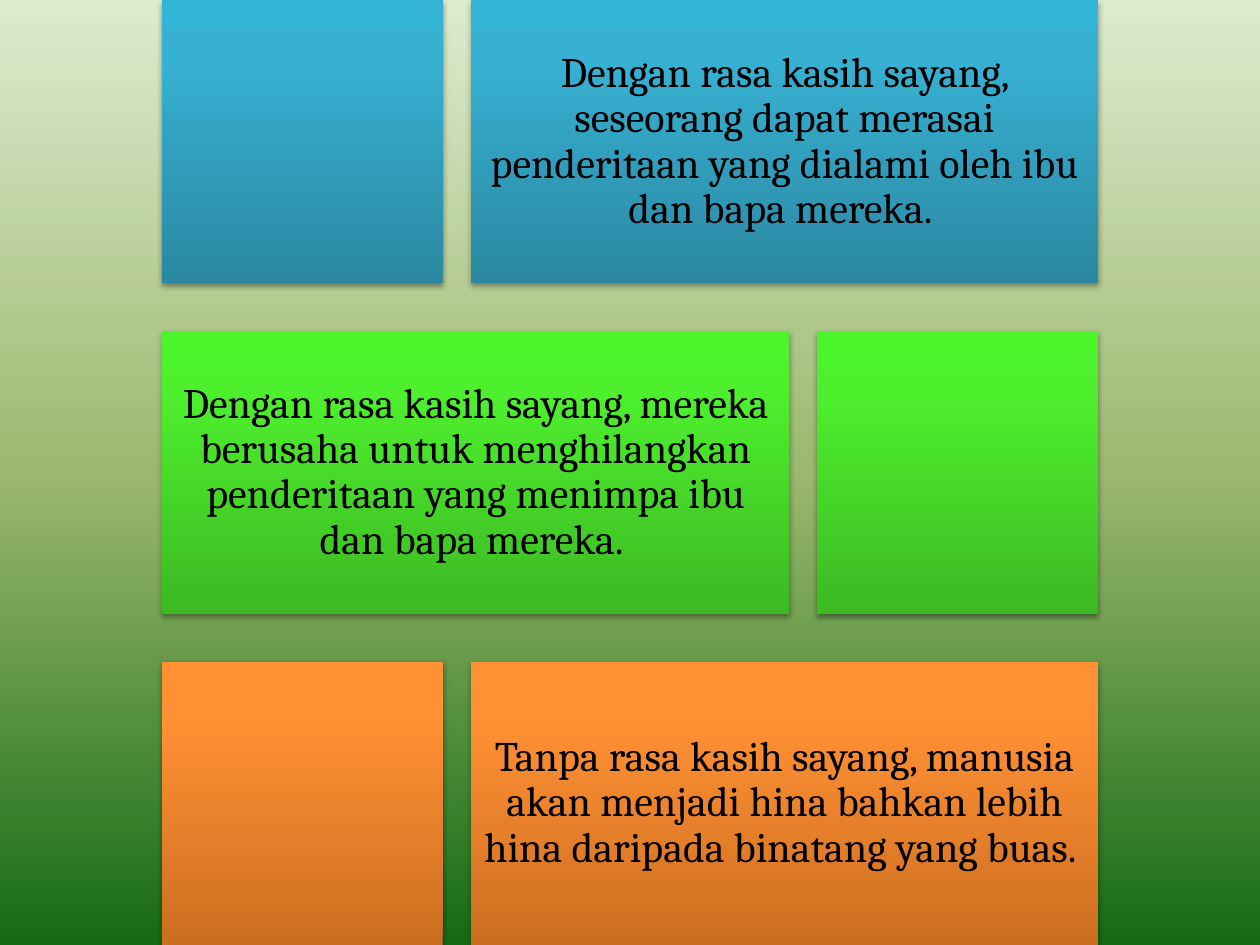
from lxml.etree import SubElement
from pptx import Presentation
from pptx.dml.color import RGBColor
from pptx.enum.shapes import MSO_SHAPE
from pptx.enum.text import MSO_ANCHOR, PP_ALIGN
from pptx.oxml.ns import qn
from pptx.util import Pt

BLACK = RGBColor(0x00, 0x00, 0x00)
MEADOW = [(0, RGBColor(0xDD, 0xEB, 0xCF)), (50, RGBColor(0x9C, 0xB8, 0x6E)),
          (100, RGBColor(0x15, 0x6B, 0x13))]
BLUE = [(0, RGBColor(0x2A, 0x88, 0xA2)), (80, RGBColor(0x37, 0xB1, 0xD2)),
        (100, RGBColor(0x34, 0xB4, 0xD6))]
GREEN = [(0, RGBColor(0x3C, 0xB9, 0x23)), (80, RGBColor(0x4E, 0xF0, 0x2E)),
         (100, RGBColor(0x4C, 0xF5, 0x2A))]
ORANGE = [(0, RGBColor(0xCC, 0x6E, 0x20)), (80, RGBColor(0xFF, 0x90, 0x34)),
          (100, RGBColor(0xFF, 0x91, 0x36))]

# Grid in points: each row has a wide text card and a narrow plain tile
LEFT, GAP = 92.5, 16
WIDE, NARROW = 358.5, 160.5
ROW_H, ROW_STEP = 162, 189

ROWS = [
    (BLUE, True, "Dengan rasa kasih sayang, seseorang dapat merasai "
                 "penderitaan yang dialami oleh ibu dan bapa mereka. "),
    (GREEN, False, "Dengan rasa kasih sayang, mereka berusaha untuk menghilangkan "
                   "penderitaan yang menimpa ibu dan bapa mereka. "),
    (ORANGE, True, "Tanpa rasa kasih sayang, manusia akan menjadi hina bahkan "
                   "lebih hina daripada binatang yang buas. "),
]


def set_gradient(fill, element, stops, angle):
    fill.gradient()
    fill.gradient_angle = angle
    gs_lst = next(element.iter(qn("a:gsLst")))
    gs_lst.clear()
    for pos, color in stops:
        gs = SubElement(gs_lst, qn("a:gs"), pos=str(pos * 1000))
        SubElement(gs, qn("a:srgbClr"), val=str(color))


def set_shadow(sp, opacity, distance, blur=3.1):
    sp.shadow.inherit = False
    effects = next(sp.element.iter(qn("a:effectLst")))
    shadow = SubElement(effects, qn("a:outerShdw"), blurRad=str(Pt(blur)),
                        dist=str(Pt(distance)), dir="5400000", rotWithShape="0")
    color = SubElement(shadow, qn("a:srgbClr"), val=str(BLACK))
    SubElement(color, qn("a:alpha"), val=str(opacity * 1000))


def write_text(tf, text, font="Cambria", size=24, color=BLACK,
               align=PP_ALIGN.CENTER, spacing=0.9, inset=7.2):
    tf.word_wrap = True
    tf.vertical_anchor = MSO_ANCHOR.MIDDLE
    tf.margin_left = tf.margin_right = tf.margin_top = tf.margin_bottom = Pt(inset)
    p = tf.paragraphs[0]
    p.alignment = align
    p.line_spacing = spacing
    r = p.add_run()
    r.text = text
    r.font.name = font
    r.font.size = Pt(size)
    r.font.color.rgb = color


class SlideBuilder:
    def __init__(self, prs):
        self.slide = prs.slides.add_slide(prs.slide_layouts[6])

    def background(self, stops):
        set_gradient(self.slide.background.fill, self.slide.element, stops, 270)

    def tile(self, x, y, w, stops, opacity=38, distance=1.6):
        sp = self.slide.shapes.add_shape(MSO_SHAPE.RECTANGLE, Pt(x), Pt(y),
                                         Pt(w), Pt(ROW_H))
        set_gradient(sp.fill, sp.element, stops, 90)
        sp.line.fill.background()
        set_shadow(sp, opacity, distance)
        return sp

    def card(self, x, y, stops, text):
        sp = self.tile(x, y, WIDE, stops, opacity=35, distance=1.8)
        write_text(sp.text_frame, text)


def main():
    prs = Presentation()
    prs.slide_width, prs.slide_height = Pt(720), Pt(540)
    builder = SlideBuilder(prs)
    builder.background(MEADOW)

    # Rows alternate the side of the narrow tile
    for i, (stops, tile_first, text) in enumerate(ROWS):
        y = i * ROW_STEP
        card_x = LEFT + NARROW + GAP if tile_first else LEFT
        tile_x = LEFT if tile_first else LEFT + WIDE + GAP
        builder.card(card_x, y, stops, text)
        builder.tile(tile_x, y, NARROW, stops)

    prs.save("out.pptx")


if __name__ == "__main__":
    main()
